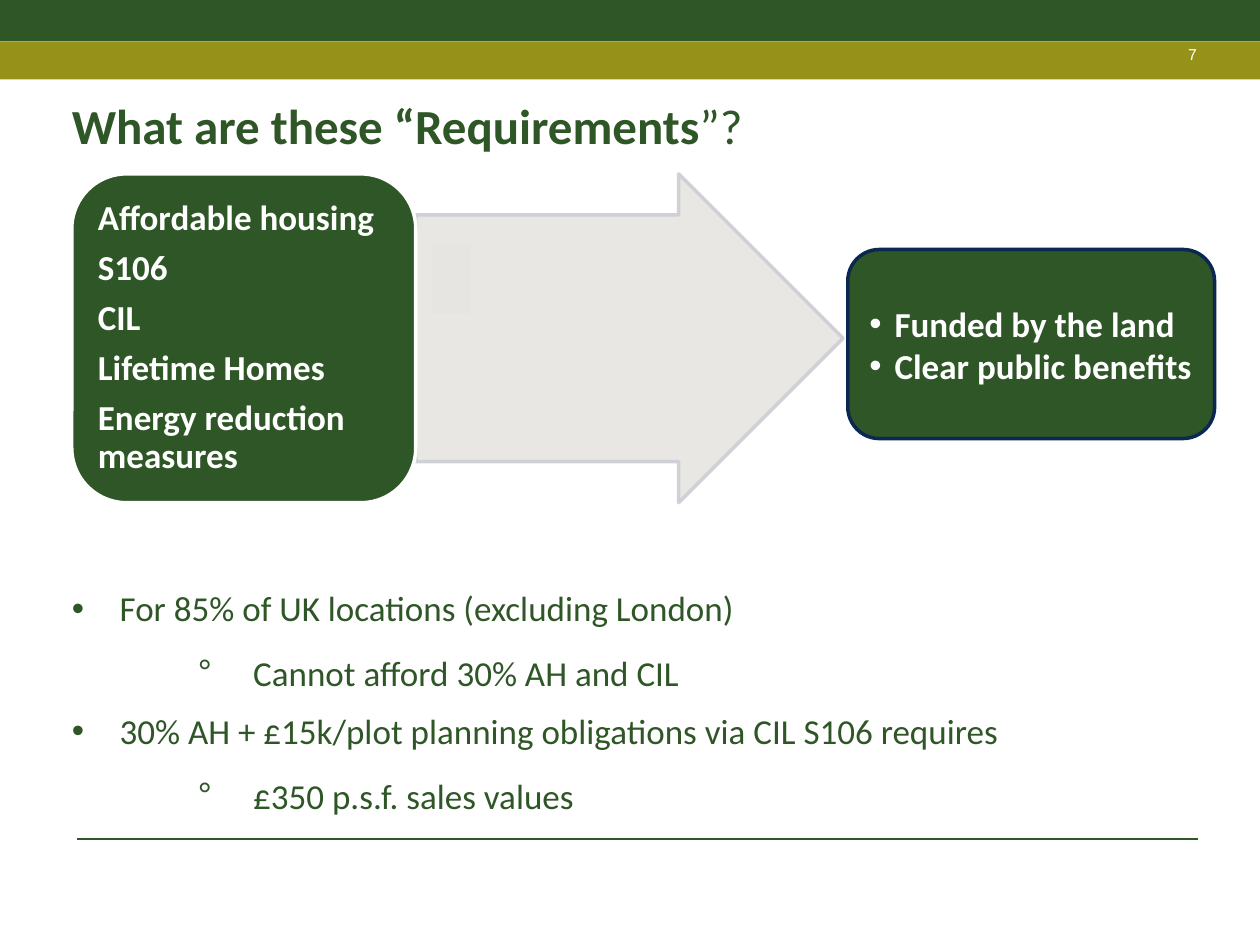
from dataclasses import dataclass

from lxml import etree
from pptx import Presentation
from pptx.dml.color import RGBColor
from pptx.enum.shapes import MSO_CONNECTOR, MSO_SHAPE
from pptx.enum.text import MSO_ANCHOR, PP_ALIGN
from pptx.oxml.ns import qn
from pptx.util import Inches, Pt

RECT, ROUNDED, ARROW = MSO_SHAPE.RECTANGLE, MSO_SHAPE.ROUNDED_RECTANGLE, MSO_SHAPE.RIGHT_ARROW
STRAIGHT = MSO_CONNECTOR.STRAIGHT
TOP, MIDDLE = MSO_ANCHOR.TOP, MSO_ANCHOR.MIDDLE
LEFT, RIGHT = PP_ALIGN.LEFT, PP_ALIGN.RIGHT


@dataclass(frozen=True)
class Theme:
    green: str = "2F5626"
    olive: str = "969118"
    white: str = "FFFFFF"
    stone: str = "E7E5E2"
    silver: str = "CCCED4"
    navy: str = "0A2851"
    font: str = "Calibri"
    number_font: str = "Arial"
    title_size: int = 28
    text_size: int = 20
    number_size: int = 9


THEME = Theme()


@dataclass(frozen=True)
class Box:
    """An area in inches; share() takes percentages of it."""
    x: float
    y: float
    w: float
    h: float

    def share(self, x, y, w, h):
        return Box(self.x + self.w * x / 100, self.y + self.h * y / 100,
                   self.w * w / 100, self.h * h / 100)

    def emu(self):
        return [Inches(length) for length in (self.x, self.y, self.w, self.h)]


def color(value):
    return RGBColor.from_string(value)


def add_block(slide, box, kind, fill, line=None):
    block = slide.shapes.add_shape(kind, *box.emu())
    block.shadow.inherit = False
    block.fill.solid()
    block.fill.fore_color.rgb = color(fill)
    if line:
        block.line.color.rgb = color(line)
        block.line.width = Pt(2)
    else:
        block.line.fill.background()
    return block


def set_opacity(properties, percent):
    for rgb in properties.iter(qn("a:srgbClr")):
        etree.SubElement(rgb, qn("a:alpha"), val=str(percent * 1000))


def set_frame(frame, anchor, insets):
    frame.word_wrap = True
    frame.vertical_anchor = anchor
    (frame.margin_left, frame.margin_top,
     frame.margin_right, frame.margin_bottom) = [Inches(inset) for inset in insets]


def style_run(run, size, ink, bold=False, font=THEME.font):
    run.font.name, run.font.size, run.font.bold = font, Pt(size), bold
    run.font.color.rgb = color(ink)


def add_bullet(paragraph, mark, left, hanging):
    properties = paragraph._p.get_or_add_pPr()
    properties.set("marL", str(Inches(left)))
    properties.set("indent", str(-Inches(hanging)))
    etree.SubElement(properties, qn("a:buFont"), typeface=THEME.number_font)
    etree.SubElement(properties, qn("a:buChar"), char=mark)


def write_lines(frame, lines, ink, bold):
    frame.text = "\n".join(lines)
    for paragraph in frame.paragraphs:
        paragraph.alignment = LEFT
        style_run(paragraph.runs[0], THEME.text_size, ink, bold)
    return frame.paragraphs


def draw_page_frame(slide, page):
    # Header bands
    add_block(slide, page.share(0, 4.4, 100, 4), RECT, THEME.olive)
    add_block(slide, page.share(0, 0, 100, 4.4), RECT, THEME.green)

    # Footer rule
    rule = page.share(6.1, 88.8, 89, 0)
    footer = slide.shapes.add_connector(STRAIGHT, Inches(rule.x), Inches(rule.y),
                                        Inches(rule.x + rule.w), Inches(rule.y))
    footer.line.color.rgb = color(THEME.green)
    footer.line.width = Pt(0.75)
    etree.SubElement(footer._element.spPr, qn("a:effectLst"))

    # Page number
    number = slide.shapes.add_textbox(*page.share(90.6, 3.07, 4.4, 5.33).emu()).text_frame
    set_frame(number, MIDDLE, (0, 0, 0, 0))
    number.text = "7"
    number.paragraphs[0].alignment = RIGHT
    style_run(number.paragraphs[0].runs[0], THEME.number_size, THEME.white,
              font=THEME.number_font)


def draw_title(slide, box):
    title = slide.shapes.title
    title.left, title.top, title.width, title.height = box.emu()
    set_frame(title.text_frame, TOP, (0, 0.05, 0.1, 0.05))
    heading = title.text_frame.paragraphs[0]
    heading.alignment, heading.line_spacing = LEFT, 0.9
    for words, bold in (("What are these “Requirements", True), ("”?", False)):
        run = heading.add_run()
        run.text = words
        style_run(run, THEME.title_size, THEME.green, bold)


def draw_requirements_flow(slide, box):
    # Arrow from requirements to outcome
    arrow = add_block(slide, box.share(30.1, 0, 37.4, 100), ARROW, THEME.stone, THEME.silver)
    arrow.adjustments[0], arrow.adjustments[1] = 0.75, 0.5
    set_opacity(arrow._element.spPr, 90)

    # Requirements
    requirements = add_block(slide, box.share(0, 0, 30.1, 100), ROUNDED,
                             THEME.green, THEME.white).text_frame
    set_frame(requirements, MIDDLE, (0.08, 0.04, 0.08, 0.04))
    lines = ("Affordable housing", "S106", "CIL", "Lifetime Homes",
             "Energy reduction measures")
    for paragraph in write_lines(requirements, lines, THEME.white, True):
        paragraph.line_spacing, paragraph.space_after = 0.9, Pt(7)

    # Pale patch on the arrow
    add_block(slide, box.share(31.5, 21.5, 3.4, 21.1), RECT, THEME.stone)

    # Outcome
    outcome = add_block(slide, box.share(67.9, 23, 32.1, 57.5), ROUNDED,
                        THEME.green, THEME.navy).text_frame
    set_frame(outcome, MIDDLE, (0.1, 0.05, 0.1, 0.05))
    lines = ("Funded by the land", "Clear public benefits")
    for paragraph in write_lines(outcome, lines, THEME.white, True):
        add_bullet(paragraph, "•", 0.2, 0.2)


def draw_viability_points(slide, box):
    points = (
        ("For 85% of UK locations (excluding London)", 0),
        ("Cannot afford 30% AH and CIL", 1),
        ("30% AH + £15k/plot planning obligations via CIL S106 requires", 0),
        ("£350 p.s.f. sales values", 1),
    )
    frame = slide.shapes.add_textbox(*box.emu()).text_frame
    set_frame(frame, TOP, (0, 0.05, 0.1, 0.05))
    paragraphs = write_lines(frame, [words for words, _ in points], THEME.green, False)
    for index, (paragraph, (_, level)) in enumerate(zip(paragraphs, points)):
        paragraph.level = level
        paragraph.line_spacing = 1.0 if level else 0.85
        paragraph.space_before = Pt(6.8 if index else 0)
        paragraph.space_after = Pt(6)
        if level:
            add_bullet(paragraph, "°", 1.44, 0.44)
        else:
            add_bullet(paragraph, "•", 0.38, 0.38)


def main():
    page = Box(0, 0, 10, 7.5)
    deck = Presentation()
    deck.slide_width, deck.slide_height = Inches(page.w), Inches(page.h)
    slide = deck.slides.add_slide(deck.slide_layouts[5])
    draw_page_frame(slide, page)
    draw_title(slide, page.share(5.7, 10.13, 85, 10.53))
    draw_requirements_flow(slide, page.share(5.7, 18.4, 90.7, 34.8))
    draw_viability_points(slide, page.share(5.7, 62.13, 86.7, 23.47))
    deck.save("out.pptx")


if __name__ == "__main__":
    main()
